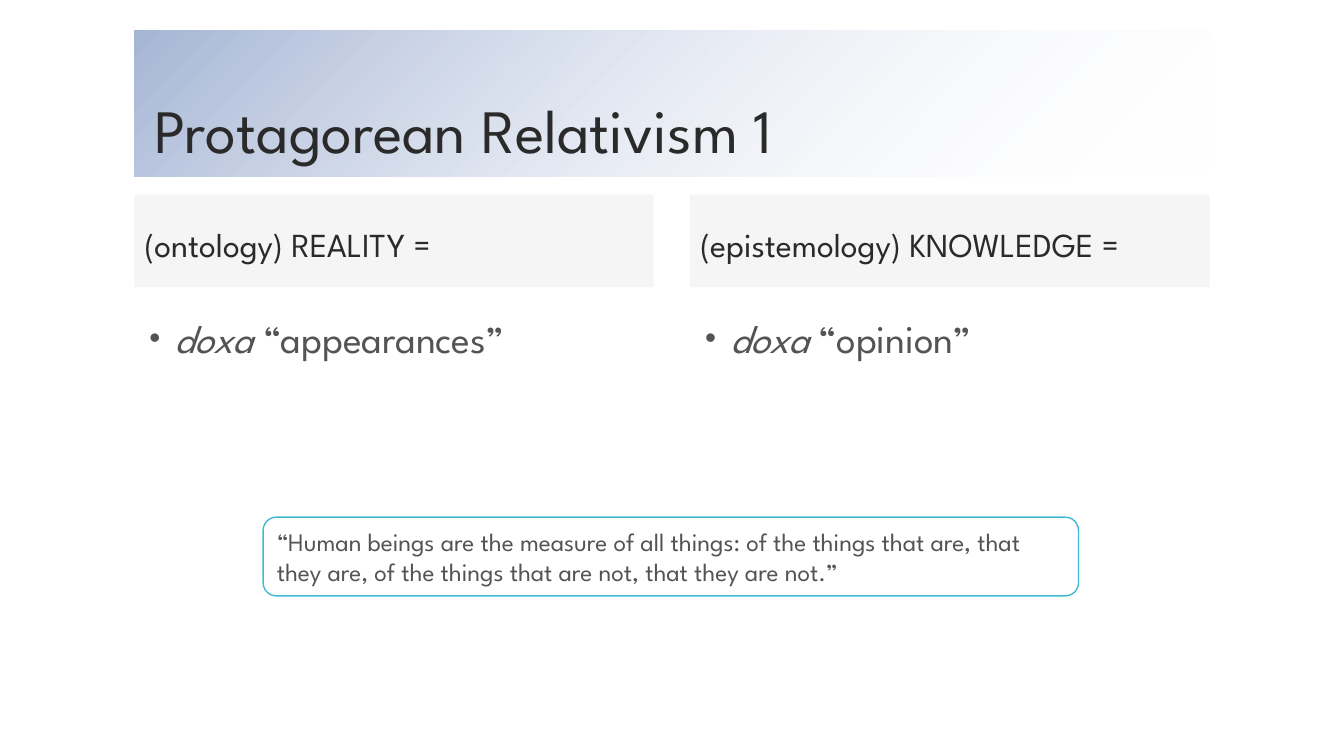
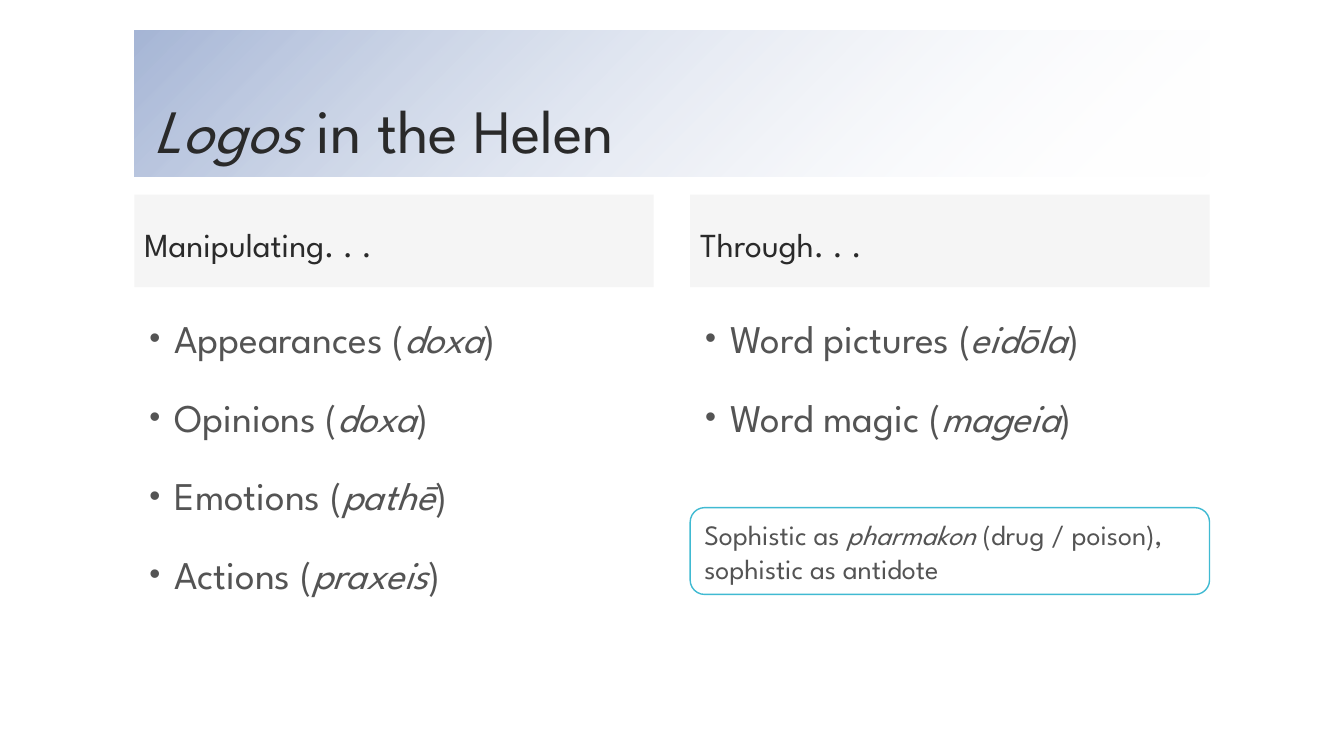
"""Build two slides on Protagorean relativism and logos in the Helen."""
from dataclasses import dataclass

from lxml.etree import SubElement
from pptx import Presentation
from pptx.dml.color import RGBColor as RGB
from pptx.enum.shapes import MSO_SHAPE as SHAPE
from pptx.enum.text import MSO_ANCHOR as ANCHOR, MSO_AUTO_SIZE as AUTO, PP_ALIGN as ALIGN
from pptx.oxml.ns import qn
from pptx.util import Pt

SLIDES = [
    {
        "title": "Protagorean Relativism 1",
        "columns": [
            ("(ontology) REALITY =", ["*doxa* “appearances”"]),
            ("(epistemology) KNOWLEDGE =", ["*doxa* “opinion”"]),
        ],
        "callout": {
            "text": "“Human beings are the measure of all things: of the things that are, "
                    "that they are, of the things that are not, that they are not.”",
            "box": (188, 369.4, 582.4, 56.2),
            "size": 18,
        },
    },
    {
        "title": "*Logos* in the Helen",
        "columns": [
            ("Manipulating. . .", ["Appearances (*doxa*)", "Opinions (*doxa*)",
                                   "Emotions (*pathē*)", "Actions (*praxeis*)"]),
            ("Through. . .", ["Word pictures (*eidōla*)", "Word magic (*mageia*)"]),
        ],
        "callout": {
            "text": "Sophistic as *pharmakon* (drug / poison), sophistic as antidote",
            "box": (493, 362.6, 371, 62),
            "size": 20,
        },
    },
]


@dataclass(frozen=True)
class Theme:
    font: str = "League Spartan"
    dark: str = "2A2A2A"
    body: str = "545454"
    band: str = "A6B6D6"
    head: str = "BFBFBF"
    accent: str = "40BAD2"
    white: str = "FFFFFF"
    title_size: int = 44
    head_size: int = 24
    list_size: int = 28


T = Theme()
WIDTH, HEIGHT = 960, 540
LEFT, GAP = 96, 26
CONTENT_W = WIDTH - 2 * LEFT
COL_W = (CONTENT_W - GAP) / 2
TITLE_TOP, TITLE_H = 21.6, 104.4
HEAD_TOP, HEAD_H = 139, 66.2
LIST_TOP, LIST_H = 216, 257.8


def add_box(slide, box, kind=SHAPE.RECTANGLE):
    sp = slide.shapes.add_shape(kind, *(Pt(v) for v in box))
    sp.shadow.inherit = False
    sp.line.fill.background()
    return sp


def set_alpha(color, percent):
    SubElement(color, qn("a:alpha"), val=str(percent * 1000))


def add_bullet(p):
    pPr = p._p.get_or_add_pPr()
    pPr.set("marL", str(Pt(21.6)))
    pPr.set("indent", str(-Pt(18)))
    SubElement(SubElement(pPr, qn("a:buClr")), qn("a:srgbClr"), val=T.body)
    SubElement(pPr, qn("a:buSzPct"), val="80000")
    SubElement(pPr, qn("a:buFont"), typeface="Arial")
    SubElement(pPr, qn("a:buChar"), char="•")


def write(sp, lines, size, color, anchor=ANCHOR.MIDDLE, spacing=None, before=0, bullets=False):
    """Write lines into a shape; text between asterisks is italic."""
    tf = sp.text_frame
    tf.word_wrap = True
    tf.vertical_anchor = anchor
    for i, line in enumerate(lines):
        p = tf.add_paragraph() if i else tf.paragraphs[0]
        p.alignment = ALIGN.LEFT
        p.line_spacing = spacing
        p.space_before = Pt(before)
        if bullets:
            add_bullet(p)
        for j, part in enumerate(line.split("*")):
            if part:
                r = p.add_run()
                r.text = part
                r.font.name = T.font
                r.font.size = Pt(size)
                r.font.italic = j % 2 == 1
                r.font.color.rgb = RGB.from_string(color)
    return tf


def add_title(slide, text):
    sp = add_box(slide, (LEFT, TITLE_TOP, CONTENT_W, TITLE_H))
    sp.fill.gradient()
    sp.fill.gradient_angle = 315
    for stop, color, place in zip(sp.fill.gradient_stops, (T.band, T.white), (0, 1)):
        stop.color.rgb = RGB.from_string(color)
        stop.position = place
    set_alpha(list(sp._element.spPr.iter(qn("a:srgbClr")))[-1], 0)
    tf = write(sp, [text], T.title_size, T.dark, ANCHOR.BOTTOM, 0.9)
    tf.margin_left = tf.margin_right = Pt(14.4)
    tf.margin_top = tf.margin_bottom = Pt(7.2)


def add_column(slide, index, heading, items):
    x = LEFT + index * (COL_W + GAP)
    sp = add_box(slide, (x, HEAD_TOP, COL_W, HEAD_H))
    sp.fill.solid()
    sp.fill.fore_color.rgb = RGB.from_string(T.head)
    set_alpha(next(sp._element.spPr.iter(qn("a:srgbClr"))), 15)
    write(sp, [heading], T.head_size, T.dark, spacing=1.14)
    box = slide.shapes.add_textbox(*(Pt(v) for v in (x, LIST_TOP, COL_W, LIST_H)))
    write(box, items, T.list_size, T.body, ANCHOR.TOP, 1.14, 18, True)


def add_callout(slide, text, box, size):
    sp = add_box(slide, box, SHAPE.ROUNDED_RECTANGLE)
    sp.fill.solid()
    sp.fill.fore_color.rgb = RGB.from_string(T.white)
    sp.line.color.rgb = RGB.from_string(T.accent)
    sp.line.width = Pt(1)
    write(sp, [text], size, T.body).auto_size = AUTO.SHAPE_TO_FIT_TEXT


def main():
    prs = Presentation()
    prs.slide_width, prs.slide_height = Pt(WIDTH), Pt(HEIGHT)
    for content in SLIDES:
        slide = prs.slides.add_slide(prs.slide_layouts[6])
        add_title(slide, content["title"])
        for i, (heading, items) in enumerate(content["columns"]):
            add_column(slide, i, heading, items)
        add_callout(slide, **content["callout"])
    prs.save("out.pptx")


if __name__ == "__main__":
    main()
